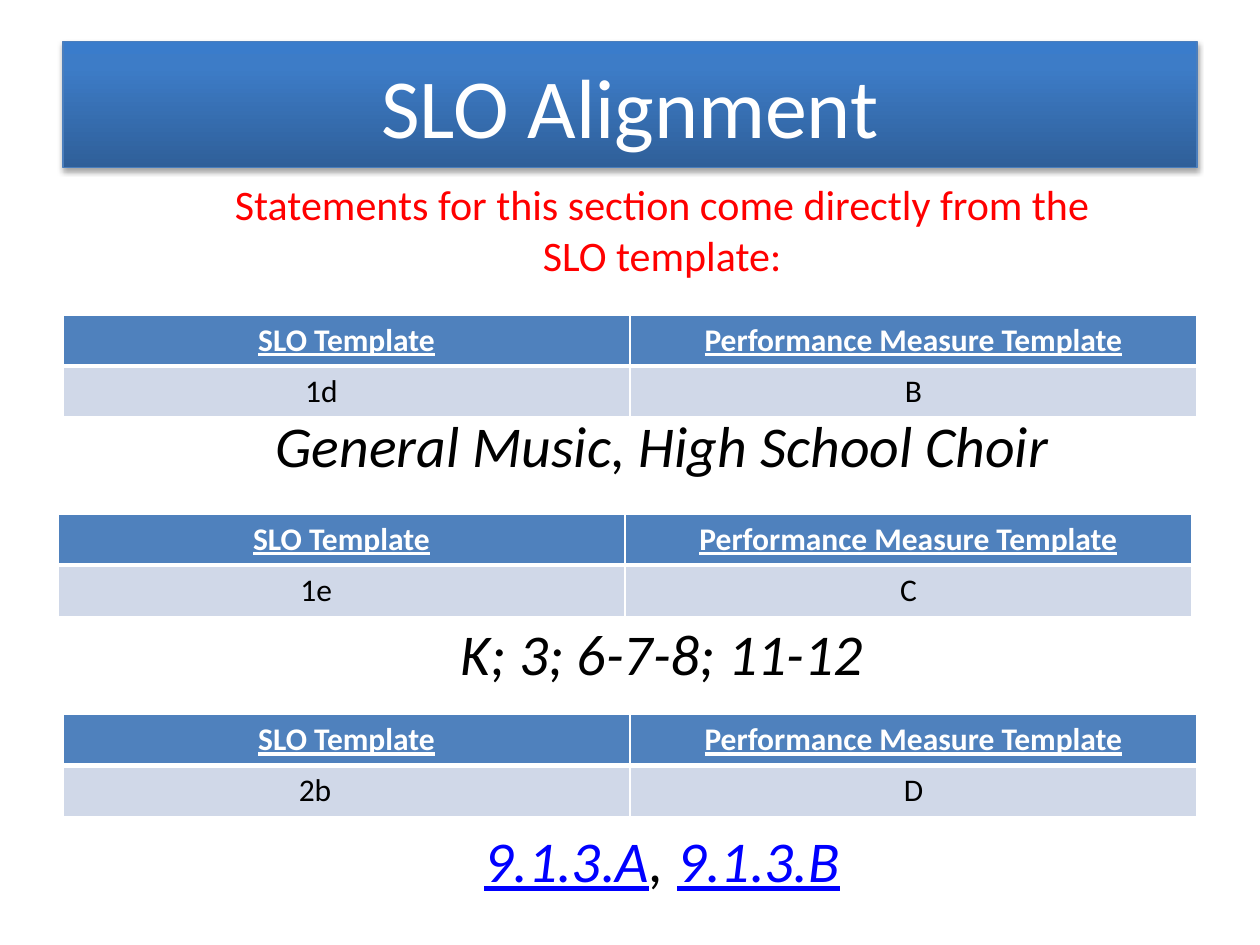
"""Build the SLO Alignment slide."""
from lxml import etree
from pptx import Presentation
from pptx.dml.color import RGBColor
from pptx.enum.text import MSO_ANCHOR, MSO_AUTO_SIZE, PP_ALIGN
from pptx.oxml import parse_xml
from pptx.oxml.ns import qn
from pptx.util import Inches, Pt

CENTER = PP_ALIGN.CENTER
MIDDLE, TOP = MSO_ANCHOR.MIDDLE, MSO_ANCHOR.TOP
NO_AUTOFIT = MSO_AUTO_SIZE.NONE
NAMESPACE = 'xmlns:a="http://schemas.openxmlformats.org/drawingml/2006/main"'
COLORS = {
    "white": "FFFFFF", "black": "000000", "red": "FF0000", "link": "0000FF",
    "header": "4F81BD", "band": "D0D8E8", "title_line": "4B7EBC",
}
TITLE_STOPS = [(0, "2F5F99"), (80, "3D7CC7"), (100, "3A7CCB")]
HEADERS = ["SLO Template", "Performance Measure Template"]
SECTIONS = [
    (0.5, 2.5, "1d", "B", 0.4),
    (0.46, 4.08, "1e", "C", 0.4),
    (0.5, 5.67, "2b", "D", 0.5),
]


def write(paragraph, text, size=18, color="black", bold=False, italic=False, underline=False):
    """Append a formatted run to a centred paragraph."""
    paragraph.alignment = CENTER
    run = paragraph.add_run()
    run.text = text
    font = run.font
    font.name, font.size = "Calibri", Pt(size)
    font.bold, font.italic, font.underline = bold, italic, underline
    font.color.rgb = RGBColor.from_string(COLORS[color])


def place(shape, left, top, width, height):
    """Set position and size in inches."""
    shape.left, shape.top = Inches(left), Inches(top)
    shape.width, shape.height = Inches(width), Inches(height)


def add_title(title):
    """Format the title as a gradient banner with a shadow."""
    place(title, 0.5, 0.33, 9, 1)
    stops = "".join(
        f'<a:gs pos="{position * 1000}"><a:srgbClr val="{color}"/></a:gs>'
        for position, color in TITLE_STOPS
    )
    properties = title._element.spPr
    properties.append(parse_xml(
        f'<a:gradFill {NAMESPACE} rotWithShape="1"><a:gsLst>{stops}</a:gsLst>'
        '<a:lin ang="16200000" scaled="0"/></a:gradFill>'
    ))
    title.line.color.rgb = RGBColor.from_string(COLORS["title_line"])
    title.line.width = Pt(0.75)
    properties.append(parse_xml(
        f'<a:effectLst {NAMESPACE}><a:outerShdw blurRad="{Pt(3.1)}" dist="{Pt(1.8)}" '
        'dir="5400000" rotWithShape="0"><a:srgbClr val="000000"><a:alpha val="35000"/>'
        '</a:srgbClr></a:outerShdw></a:effectLst>'
    ))
    title.text_frame.vertical_anchor = MIDDLE
    write(title.text_frame.paragraphs[0], "SLO Alignment", size=48, color="white")


def add_statements(body):
    """Fill the body with the intro and the statement under each table."""
    place(body, 0.17, 1.37, 9.67, 5.88)
    frame = body.text_frame
    frame.auto_size, frame.vertical_anchor = NO_AUTOFIT, TOP
    intro = {"size": 24, "color": "red"}
    answer = {"size": 33, "italic": True}
    link = {**answer, "color": "link", "underline": True}
    lines = [
        (0, [("Statements for this section come directly from the", intro)]),
        (0, [("SLO template:", intro)]),
        (74.5, [("General Music, High School Choir", answer)]),
        (79, [("K; 3; 6-7-8; 11-12", answer)]),
        (79, [("9.1.3.A", link), (", ", answer), ("9.1.3.B", link)]),
    ]
    for index, (gap, runs) in enumerate(lines):
        paragraph = frame.add_paragraph() if index else frame.paragraphs[0]
        paragraph.space_before = Pt(gap)
        properties = paragraph._p.get_or_add_pPr()
        properties.set("marL", str(Inches(0.5)))
        properties.set("indent", "0")
        etree.SubElement(properties, qn("a:buNone"))
        for text, style in runs:
            write(paragraph, text, **style)


def format_cell(cell, text, fill, bottom, **style):
    """Write a cell and set its white borders and fill."""
    write(cell.text_frame.paragraphs[0], text, **style)
    properties = cell._tc.get_or_add_tcPr()
    for side, width in (("L", 1), ("R", 1), ("T", 1), ("B", bottom)):
        properties.append(parse_xml(
            f'<a:ln{side} {NAMESPACE} w="{Pt(width)}"><a:solidFill>'
            f'<a:srgbClr val="{COLORS["white"]}"/></a:solidFill></a:ln{side}>'
        ))
    cell.fill.solid()
    cell.fill.fore_color.rgb = RGBColor.from_string(COLORS[fill])


def add_section(slide, left, top, slo, measure, shift):
    """Add a table matching an SLO section to its performance measure."""
    table = slide.shapes.add_table(
        2, 2, Inches(left), Inches(top), Inches(9), Inches(0.81)
    ).table
    for column, (header, section) in enumerate(zip(HEADERS, (slo, measure))):
        format_cell(table.cell(0, column), header, "header", 3,
                    color="white", bold=True, underline=True)
        format_cell(table.cell(1, column), section, "band", 1)
    table.cell(1, 0).margin_right = Inches(0.1 + shift)


def main():
    """Build and save the slide."""
    presentation = Presentation()
    presentation.slide_width, presentation.slide_height = Inches(10), Inches(7.5)
    slide = presentation.slides.add_slide(presentation.slide_layouts[1])
    add_title(slide.shapes.title)
    add_statements(slide.placeholders[1])
    for section in SECTIONS:
        add_section(slide, *section)
    presentation.save("out.pptx")


if __name__ == "__main__":
    main()
